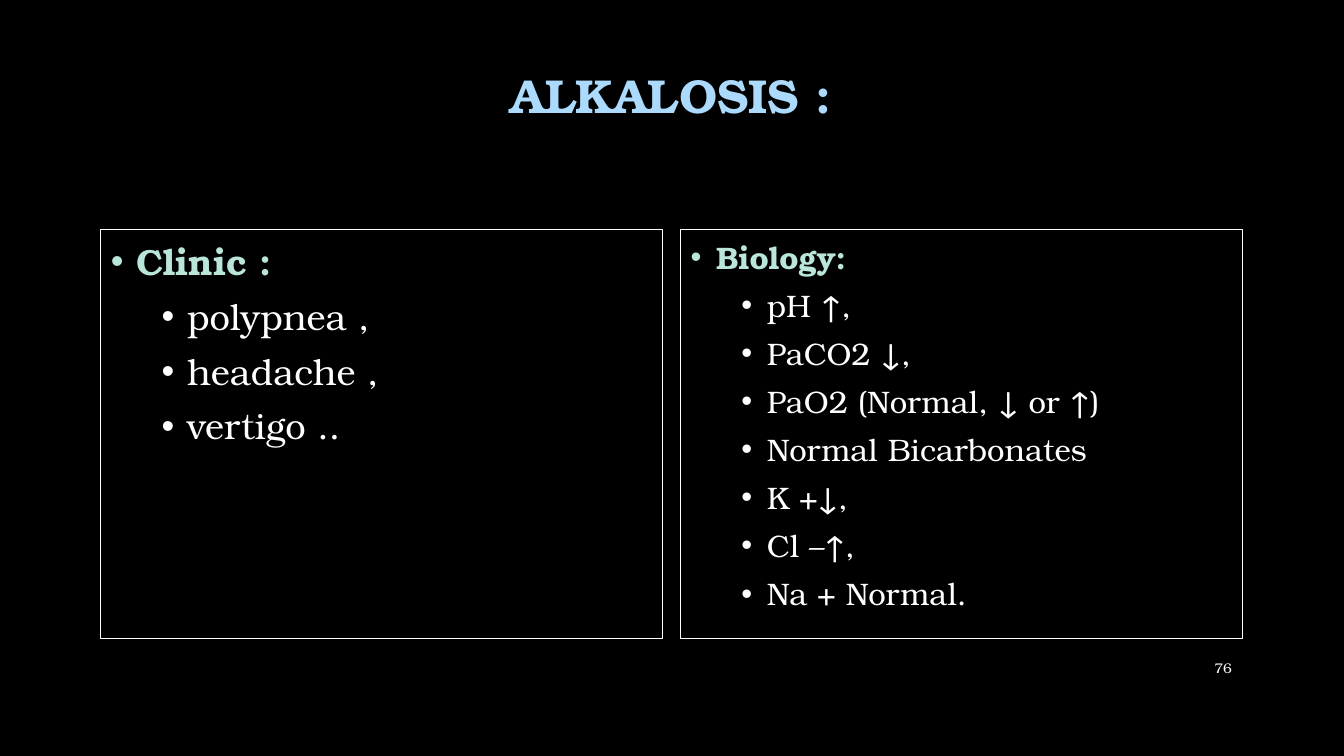
from dataclasses import dataclass
from typing import Any

from lxml.etree import SubElement
from pptx import Presentation
from pptx.dml.color import RGBColor
from pptx.enum.text import MSO_ANCHOR, MSO_AUTO_SIZE, PP_ALIGN
from pptx.oxml.ns import qn
from pptx.util import Cm, Pt

BLACK = RGBColor(0x00, 0x00, 0x00)
WHITE = RGBColor(0xFF, 0xFF, 0xFF)
SKY = RGBColor(0xAB, 0xDA, 0xFC)
MINT = RGBColor(0xB9, 0xE5, 0xDA)

FONT = "TeX Gyre Bonum"
TWO_CONTENT = 3
HANGING = Cm(0.64)
HEADING_FORMAT = {"level": 0, "line_spacing": 1.1, "space_before": Pt(10)}
FINDING_FORMAT = {"level": 1, "line_spacing": 1.1, "space_before": Pt(5)}


@dataclass(frozen=True)
class Panel:
    placeholder: int
    left: float
    size: float
    heading: str
    findings: tuple[str, ...]


PANELS = (
    Panel(1, 2.54, 25.9, "Clinic :", ("polypnea ,", "headache ,", "vertigo ..")),
    Panel(2, 17.15, 22.2, "Biology:", (
        "pH ↑,",
        "PaCO2 ↓,",
        "PaO2 (Normal, ↓ or ↑)",
        "Normal Bicarbonates",
        "K +↓,",
        "Cl –↑,",
        "Na + Normal.",
    )),
)


def apply(target: Any, values: dict[str, Any]) -> None:
    for name, value in values.items():
        setattr(target, name, value)


def place(shape: Any, left: float, top: float, width: float, height: float) -> None:
    apply(shape, {"left": Cm(left), "top": Cm(top),
                  "width": Cm(width), "height": Cm(height)})


def write(paragraph: Any, text: str, size: float, color: RGBColor,
          bold: bool, values: dict[str, Any]) -> None:
    apply(paragraph, values)
    run = paragraph.add_run()
    run.text = text
    apply(run.font, {"name": FONT, "size": Pt(size), "bold": bold})
    run.font.color.rgb = color


def add_bullet(paragraph: Any, margin: int) -> None:
    properties = paragraph._p.get_or_add_pPr()
    properties.set("marL", str(margin))
    properties.set("indent", str(-HANGING))
    SubElement(properties, qn("a:buFont")).set("typeface", "Arial")
    SubElement(properties, qn("a:buChar")).set("char", "•")


def draw_panel(slide: Any, panel: Panel) -> None:
    body = slide.placeholders[panel.placeholder]
    place(body, panel.left, 5.79, 14.16, 10.29)
    body.line.color.rgb = WHITE
    body.line.width = Pt(0.75)
    frame = body.text_frame
    apply(frame, {"auto_size": MSO_AUTO_SIZE.NONE, "word_wrap": True,
                  "vertical_anchor": MSO_ANCHOR.TOP})
    heading = frame.paragraphs[0]
    write(heading, panel.heading, panel.size, MINT, True, HEADING_FORMAT)
    add_bullet(heading, HANGING)
    for text in panel.findings:
        finding = frame.add_paragraph()
        write(finding, text, panel.size, WHITE, False, FINDING_FORMAT)
        add_bullet(finding, 3 * HANGING)


def main() -> None:
    deck = Presentation()
    apply(deck, {"slide_width": Cm(33.87), "slide_height": Cm(19.05)})
    slide = deck.slides.add_slide(deck.slide_layouts[TWO_CONTENT])
    slide.background.fill.solid()
    slide.background.fill.fore_color.rgb = BLACK

    title = slide.shapes.title
    place(title, 2.54, 0.64, 28.75, 3.68)
    title.text_frame.vertical_anchor = MSO_ANCHOR.MIDDLE
    write(title.text_frame.paragraphs[0], "ALKALOSIS :", 34, SKY, True,
          {"alignment": PP_ALIGN.CENTER, "line_spacing": 0.9})

    for panel in PANELS:
        draw_panel(slide, panel)

    page_number = slide.shapes.add_textbox(Cm(29.21), Cm(16.33), Cm(2.08), Cm(1.02))
    apply(page_number.text_frame, {"word_wrap": True,
                                   "vertical_anchor": MSO_ANCHOR.MIDDLE})
    write(page_number.text_frame.paragraphs[0], "76", 10, WHITE, False,
          {"alignment": PP_ALIGN.RIGHT})

    deck.save("out.pptx")


if __name__ == "__main__":
    main()
